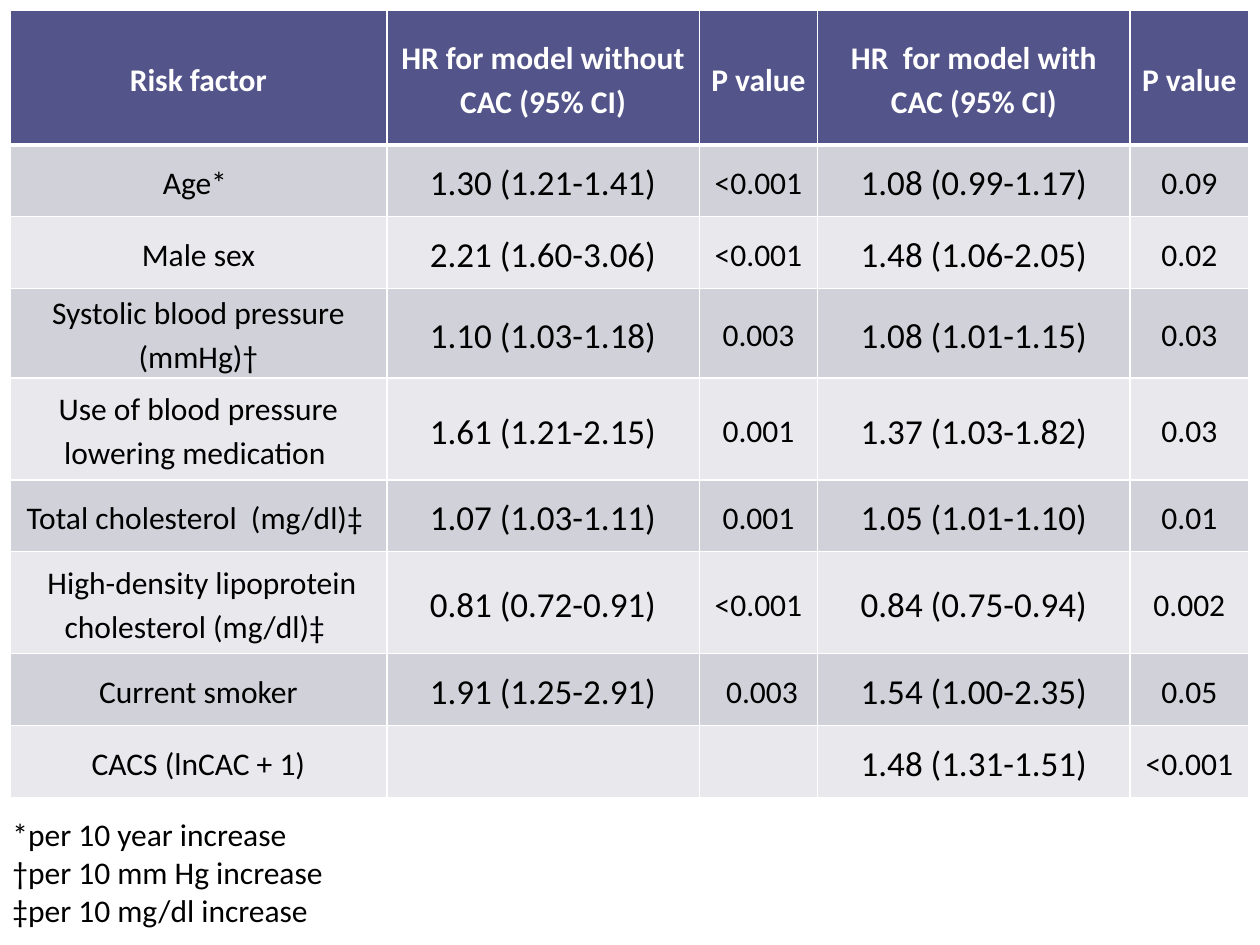
from lxml import etree
from pptx import Presentation
from pptx.dml.color import RGBColor
from pptx.enum import text
from pptx.oxml.ns import qn
from pptx.util import Inches, Pt

COLORS = {
    "header": "53548A",
    "band_dark": "D1D1DA",
    "band_light": "E9E9ED",
    "white": "FFFFFF",
    "black": "000000",
}
FONT = "Calibri"
BODY_SIZE, RATIO_SIZE = 18, 20
RATIO_COLUMNS = (1, 3)

COLUMN_WIDTHS = [2.99, 2.48, 0.94, 2.48, 0.94]
ROW_HEIGHTS = [1.07, 0.57, 0.57, 0.71, 0.81, 0.57, 0.81, 0.57, 0.57]
RISK_FACTORS = [
    ["Risk factor", "HR for model without CAC (95% CI)", "P value",
     "HR  for model with CAC (95% CI)", "P value"],
    ["Age* ", "1.30 (1.21-1.41)", "<0.001", "1.08 (0.99-1.17)", "0.09"],
    ["Male sex", "2.21 (1.60-3.06)", "<0.001", "1.48 (1.06-2.05)", "0.02"],
    ["Systolic blood pressure (mmHg)†", "1.10 (1.03-1.18)", "0.003",
     "1.08 (1.01-1.15)", "0.03"],
    ["Use of blood pressure lowering medication ", "1.61 (1.21-2.15)", "0.001",
     "1.37 (1.03-1.82)", "0.03"],
    ["Total cholesterol  (mg/dl)‡ ", "1.07 (1.03-1.11)", "0.001",
     "1.05 (1.01-1.10)", "0.01"],
    [" High-density lipoprotein cholesterol (mg/dl)‡ ", "0.81 (0.72-0.91)", "<0.001",
     "0.84 (0.75-0.94)", "0.002"],
    ["Current smoker", "1.91 (1.25-2.91)", " 0.003", "1.54 (1.00-2.35)", "0.05"],
    ["CACS (lnCAC + 1)", "", "", "1.48 (1.31-1.51)", "<0.001"],
]
INCREMENTS = ["*per 10 year increase", "†per 10 mm Hg increase", "‡per 10 mg/dl increase"]


class SlideBuilder:
    """Holds the slide being filled and the style its elements share."""

    def __init__(self, slide):
        self.slide = slide

    def format_runs(self, paragraph, size, color, bold=False):
        for run in paragraph.runs:
            run.font.name = FONT
            run.font.size = Pt(size)
            run.font.bold = bold
            run.font.color.rgb = RGBColor.from_string(COLORS[color])

    def borders(self, cell, bottom_width):
        """Draw white cell borders; they must precede the fill in the XML."""
        properties = cell._tc.get_or_add_tcPr()
        widths = {"lnL": 1, "lnR": 1, "lnT": 1, "lnB": bottom_width}
        for position, (side, width) in enumerate(widths.items()):
            line = etree.Element(qn(f"a:{side}"), w=str(Pt(width)))
            fill = etree.SubElement(line, qn("a:solidFill"))
            etree.SubElement(fill, qn("a:srgbClr"), val=COLORS["white"])
            properties.insert(position, line)

    def cell(self, cell, content, size, fill, is_header):
        cell.fill.solid()
        cell.fill.fore_color.rgb = RGBColor.from_string(COLORS[fill])
        cell.margin_left = cell.margin_right = Inches(0.07)
        cell.margin_top = cell.margin_bottom = 0
        cell.vertical_anchor = text.MSO_ANCHOR.MIDDLE
        cell.text_frame.text = content
        paragraph = cell.text_frame.paragraphs[0]
        paragraph.alignment = text.PP_ALIGN.CENTER
        paragraph.line_spacing = 1.15
        self.format_runs(paragraph, size, "white" if is_header else "black", is_header)
        self.borders(cell, 3 if is_header else 1)

    def table(self, left, top, rows):
        table = self.slide.shapes.add_table(
            len(rows), len(COLUMN_WIDTHS), Inches(left), Inches(top),
            Inches(sum(COLUMN_WIDTHS)), Inches(sum(ROW_HEIGHTS))).table
        for column, width in zip(table.columns, COLUMN_WIDTHS):
            column.width = Inches(width)
        for row, height in zip(table.rows, ROW_HEIGHTS):
            row.height = Inches(height)
        for r, values in enumerate(rows):
            is_header = r == 0
            fill = "header" if is_header else "band_dark" if r % 2 else "band_light"
            for c, value in enumerate(values):
                is_ratio = c in RATIO_COLUMNS and not is_header
                size = RATIO_SIZE if is_ratio else BODY_SIZE
                self.cell(table.cell(r, c), value, size, fill, is_header)

    def legend(self, left, top, width, height, lines):
        frame = self.slide.shapes.add_textbox(
            Inches(left), Inches(top), Inches(width), Inches(height)).text_frame
        frame.word_wrap = True
        frame.text = "\n".join(lines)
        for paragraph in frame.paragraphs:
            self.format_runs(paragraph, BODY_SIZE, "black")


def main():
    presentation = Presentation()
    presentation.slide_width = Inches(10)
    presentation.slide_height = Inches(7.5)
    builder = SlideBuilder(presentation.slides.add_slide(presentation.slide_layouts[6]))
    builder.table(0.08, 0.08, RISK_FACTORS)
    builder.legend(0, 6.42, 6.92, 1.62, INCREMENTS)
    presentation.save("out.pptx")


if __name__ == "__main__":
    main()
